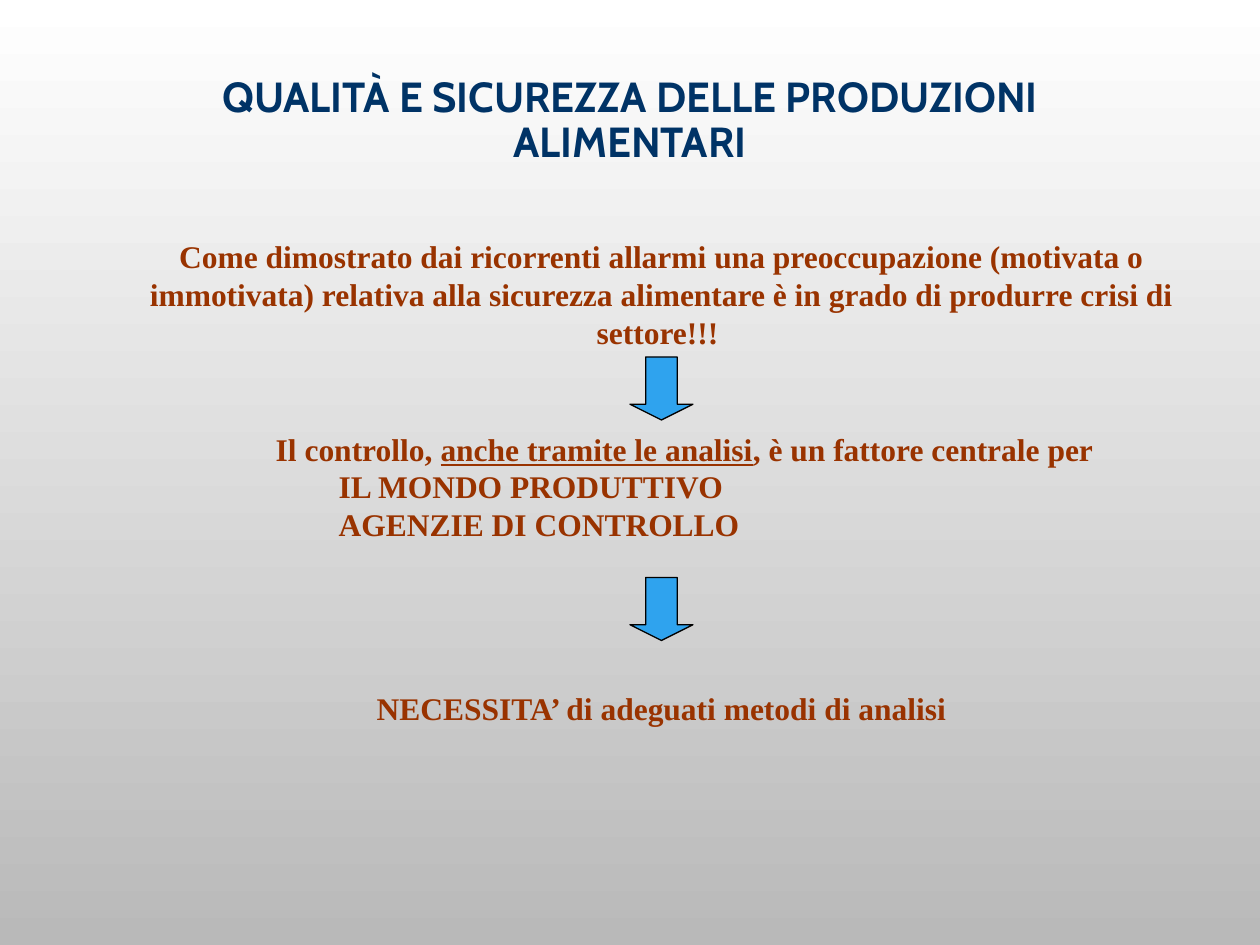
from dataclasses import dataclass
from pptx import Presentation
from pptx.dml.color import RGBColor
from pptx.enum.shapes import MSO_SHAPE
from pptx.enum.text import MSO_ANCHOR, PP_ALIGN
from pptx.util import Pt


@dataclass(frozen=True)
class Theme:
    head: str = "Cabin"
    body: str = "Times New Roman"
    navy: RGBColor = RGBColor(0x00, 0x33, 0x66)
    rust: RGBColor = RGBColor(0x99, 0x33, 0x00)
    blue: RGBColor = RGBColor(0x2F, 0xA3, 0xEE)
    black: RGBColor = RGBColor(0, 0, 0)
    top: RGBColor = RGBColor(0xFF, 0xFF, 0xFF)
    base: RGBColor = RGBColor(0xB9, 0xB9, 0xB9)
    big: int = 24
    text: int = 18


THEME = Theme()


def style(par, face, size, color):
    for run in par.runs:
        font = run.font
        font.name, font.size, font.bold = face, Pt(size), True
        font.color.rgb = color


def shade(slide):
    """Vertical gradient behind the slide."""
    fill = slide.background.fill
    fill.gradient()
    fill.gradient_angle = 270
    for stop, color in zip(fill.gradient_stops, (THEME.top, THEME.base)):
        stop.color.rgb = color


def title(slide, box, text):
    shape = slide.shapes.title
    shape.left, shape.top, shape.width, shape.height = map(Pt, box)
    frame = shape.text_frame
    frame.text = text
    frame.vertical_anchor = MSO_ANCHOR.MIDDLE
    par = frame.paragraphs[0]
    par.alignment = PP_ALIGN.CENTER
    par.line_spacing = 0.9
    style(par, THEME.head, THEME.big, THEME.navy)


def note(slide, box, lines, align=PP_ALIGN.CENTER, inset=0):
    """Text box; lines after the first are indented by inset."""
    frame = slide.shapes.add_textbox(*map(Pt, box)).text_frame
    frame.word_wrap = True
    frame.text = "\n".join(lines)
    for i, par in enumerate(frame.paragraphs):
        par.alignment = align
        if i and inset:
            par._p.get_or_add_pPr().set("marL", str(Pt(inset)))
        style(par, THEME.body, THEME.text, THEME.rust)
    return frame


def control(slide, box):
    """Statement with an underlined phrase and two indented items."""
    lines = ("Il controllo, ", "IL MONDO PRODUTTIVO", "AGENZIE DI CONTROLLO")
    frame = note(slide, box, lines, PP_ALIGN.LEFT, 36)
    par = frame.paragraphs[0]
    for text, under in (("anche tramite le analisi", True),
                        (", è un fattore centrale per", False)):
        run = par.add_run()
        run.text = text
        run.font.underline = under
    style(par, THEME.body, THEME.text, THEME.rust)


def arrow(slide, box):
    shape = slide.shapes.add_shape(MSO_SHAPE.DOWN_ARROW, *map(Pt, box))
    shape.shadow.inherit = False
    shape.adjustments[0], shape.adjustments[1] = 0.5, 0.25
    shape.fill.solid()
    shape.fill.fore_color.rgb = THEME.blue
    shape.line.color.rgb = THEME.black
    shape.line.width = Pt(0.75)


def main():
    deck = Presentation()
    deck.slide_width, deck.slide_height = Pt(720), Pt(540)
    slide = deck.slides.add_slide(deck.slide_layouts[5])
    shade(slide)
    title(slide, (54, 6.5, 612, 126),
          "QUALITÀ E SICUREZZA DELLE PRODUZIONI ALIMENTARI")
    # Alarm, control and need, joined by arrows
    note(slide, (54, 132, 648, 72.7), [
        "Come dimostrato dai ricorrenti allarmi una preoccupazione "
        "(motivata o immotivata) relativa alla sicurezza alimentare "
        "è in grado di produrre crisi di settore!!! "])
    control(slide, (150.5, 242, 486.7, 93.6))
    note(slide, (165, 390, 426, 29),
         ["NECESSITA’ di adeguati metodi di analisi"])
    for top in (204, 330):
        arrow(slide, (360, top, 36, 36))
    deck.save("out.pptx")


if __name__ == "__main__":
    main()
